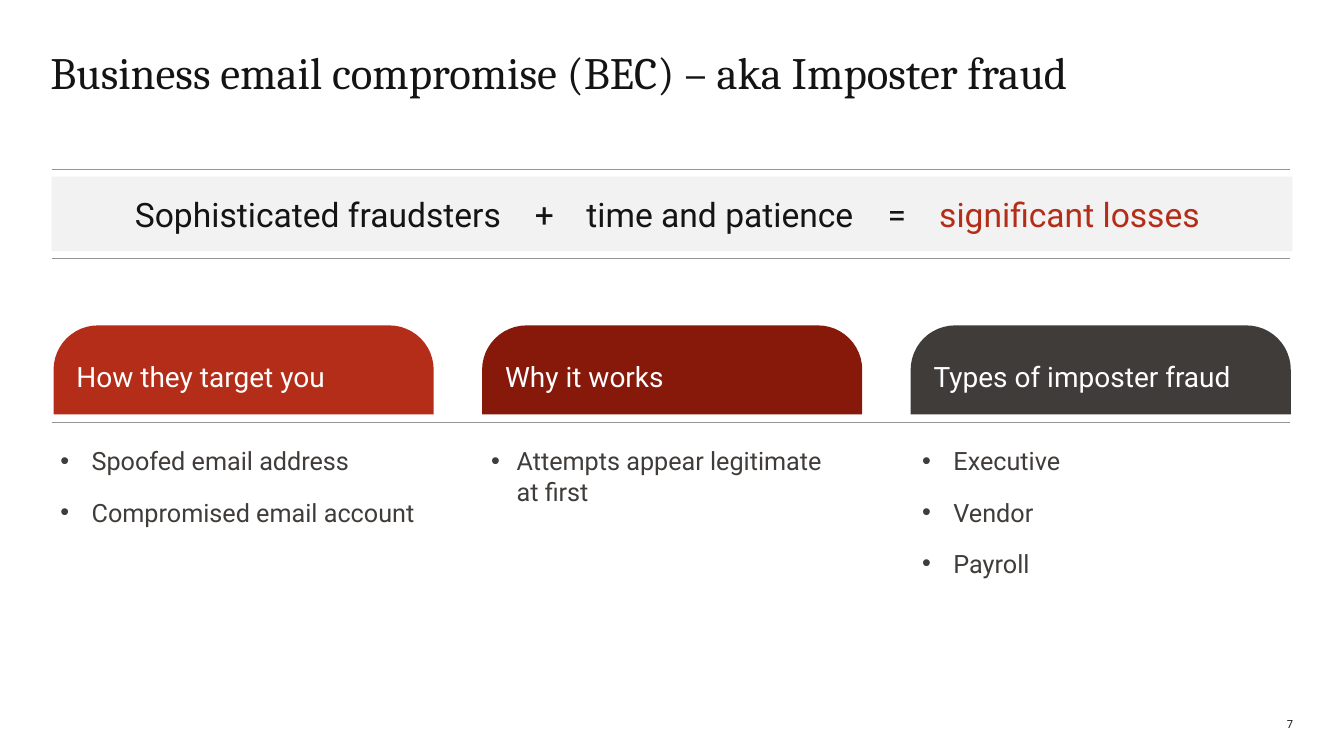
from lxml import etree
from pptx import Presentation
from pptx.dml.color import RGBColor
from pptx.enum.shapes import MSO_CONNECTOR as Connector, MSO_SHAPE as Shape
from pptx.enum.text import MSO_ANCHOR as Anchor, PP_ALIGN as Align
from pptx.oxml.ns import qn
from pptx.util import Cm, Pt

COLORS = {
    "ink": "141414",
    "body": "403C3A",
    "red": "B42D19",
    "dark_red": "87190A",
    "band": "F2F2F2",
    "rule": "969493",
    "white": "FFFFFF",
}
FORMULA_TABS = (10.08, 11.38, 18.97, 20.27)
COLUMNS = (
    ("How they target you", "red", 0.79,
     ("Spoofed email address", "Compromised email account")),
    ("Why it works", "dark_red", 0.64,
     ("Attempts appear legitimate \vat first",)),
    ("Types of imposter fraud", "body", 0.79,
     ("Executive", "Vendor", "Payroll")),
)


def color(name):
    """Return the named colour."""
    return RGBColor.from_string(COLORS[name])


def style(para, size, ink, font="Roboto"):
    """Format every run of a paragraph."""
    for span in para.runs:
        span.font.name = font
        span.font.size = Pt(size)
        span.font.color.rgb = color(ink)


def add_box(page, left, top, width, height, margins=(0, 0), anchor=Anchor.TOP):
    """Add a wrapping text box with side margins and return its frame."""
    box = page.shapes.add_textbox(Cm(left), Cm(top), Cm(width), Cm(height))
    frame = box.text_frame
    frame.word_wrap = True
    frame.vertical_anchor = anchor
    frame.margin_left, frame.margin_right = (Cm(side) for side in margins)
    frame.margin_top = frame.margin_bottom = 0
    return frame


def add_label(page, text, place, size, align=Align.LEFT,
              anchor=Anchor.TOP, font="Roboto"):
    """Add a one-paragraph text box and return the paragraph."""
    para = add_box(page, *place, anchor=anchor).paragraphs[0]
    para.text = text
    para.alignment = align
    style(para, size, "ink", font)
    return para


def add_panel(page, kind, place, fill):
    """Add a filled shape without outline or shadow."""
    panel = page.shapes.add_shape(kind, *(Cm(length) for length in place))
    panel.shadow.inherit = False
    panel.fill.solid()
    panel.fill.fore_color.rgb = color(fill)
    panel.line.fill.background()
    return panel


def add_rule(page, top):
    """Add a thin horizontal line across the content."""
    rule = page.shapes.add_connector(
        Connector.STRAIGHT, Cm(1.3), Cm(top), Cm(32.51), Cm(top))
    rule.line.color.rgb = color("rule")
    rule.line.width = Pt(0.5)
    etree.SubElement(rule._element.spPr, qn("a:effectLst"))


def add_formula(page):
    """Add the grey band with the fraud equation set on tab stops."""
    add_panel(page, Shape.RECTANGLE, (1.3, 4.45, 31.27, 1.88), "band")
    frame = add_box(page, 1.27, 4.27, 31.29, 2.24, (2.13, 0.25), Anchor.MIDDLE)
    para = frame.paragraphs[0]
    para.text = "Sophisticated fraudsters\t+\ttime and patience\t=\t"
    para.add_run().text = "significant losses"
    style(para, 24, "ink")
    para.runs[-1].font.color.rgb = color("red")
    stops = etree.SubElement(para._p.get_or_add_pPr(), qn("a:tabLst"))
    for position in FORMULA_TABS:
        etree.SubElement(stops, qn("a:tab"), pos=str(Cm(position)), algn="l")
    for top in (4.27, 6.5):
        add_rule(page, top)


def add_heading(page, text, left, fill):
    """Add a column heading with rounded top corners."""
    tab = add_panel(page, Shape.ROUND_2_SAME_RECTANGLE,
                    (left, 8.2, 9.58, 2.24), fill)
    tab.adjustments[0] = 0.5
    tab.adjustments[1] = 0
    tab.text_frame.text = text
    tab.text_frame.vertical_anchor = Anchor.MIDDLE
    para = tab.text_frame.paragraphs[0]
    para.alignment = Align.LEFT
    style(para, 20, "white")


def add_bullets(page, items, left, indent):
    """Add a bulleted list with a hanging indent."""
    frame = add_box(page, left, 11.23, 9.6, 5.92, (0.25, 0))
    for index, item in enumerate(items):
        para = frame.add_paragraph() if index else frame.paragraphs[0]
        para.text = item
        para.space_before = Pt(3)
        para.space_after = Pt(12)
        style(para, 18, "body")
        props = para._p.get_or_add_pPr()
        props.set("marL", str(Cm(indent)))
        props.set("indent", str(-Cm(indent)))
        etree.SubElement(props, qn("a:buFont"), typeface="Arial")
        etree.SubElement(props, qn("a:buChar"), char="•")


def main():
    """Build the slide and save it."""
    deck = Presentation()
    deck.slide_width, deck.slide_height = Cm(33.87), Cm(19.05)
    page = deck.slides.add_slide(deck.slide_layouts[6])

    title = add_label(page, "Business email compromise (BEC) – aka Imposter fraud",
                      (1.27, 1.27, 31.32, 2.54), 32, font="Cambria")
    title.line_spacing = 0.9
    add_formula(page)
    for index, (heading, fill, indent, items) in enumerate(COLUMNS):
        add_heading(page, heading, 1.35 + 10.8 * index, fill)
        add_bullets(page, items, 1.27 + 10.86 * index, indent)
    add_rule(page, 10.64)
    add_label(page, "7", (31.32, 17.78, 1.27, 0.64), 8,
              Align.RIGHT, Anchor.BOTTOM)
    deck.save("out.pptx")


if __name__ == "__main__":
    main()
